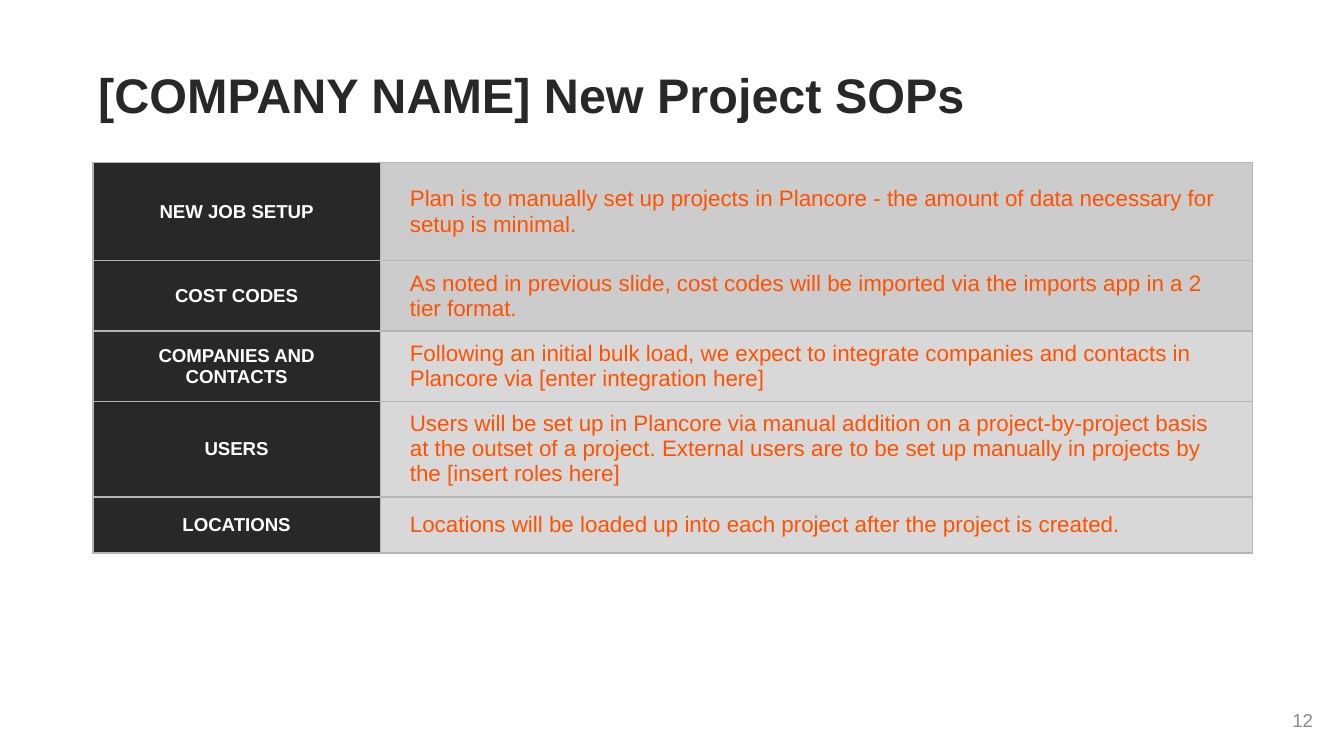
"""Build the new project SOPs slide."""
from dataclasses import dataclass

import pptx
import pptx.dml.color
import pptx.enum.text
import pptx.oxml
import pptx.oxml.ns
import pptx.util
from pptx.util import Inches

ALIGN = pptx.enum.text.PP_ALIGN
ANCHOR = pptx.enum.text.MSO_ANCHOR


@dataclass(frozen=True)
class Theme:
    font: str = "Arial"
    dark: str = "282828"
    white: str = "FFFFFF"
    accent: str = "FF5200"
    grey: str = "CCCCCC"
    light: str = "D8D8D8"
    border: str = "B5B6B4"
    muted: str = "8B8B8B"
    title_size: int = 26
    body_size: int = 12
    label_size: int = 10


@dataclass(frozen=True)
class Procedure:
    label: str
    detail: str
    fill: str
    height: float = 0.42


THEME = Theme()
PROCEDURES = [
    Procedure("NEW JOB SETUP",
              "Plan is to manually set up projects in Plancore - the amount of data "
              "necessary for setup is minimal.", THEME.grey, 0.73),
    Procedure("COST CODES",
              "As noted in previous slide, cost codes will be imported via the imports "
              "app in a 2 tier format.", THEME.grey),
    Procedure("COMPANIES AND CONTACTS",
              "Following an initial bulk load, we expect to integrate companies and "
              "contacts in Plancore via [enter integration here]", THEME.light),
    Procedure("USERS",
              "Users will be set up in Plancore via manual addition on a project-by-project "
              "basis at the outset of a project. External users are to be set up manually "
              "in projects by the [insert roles here]", THEME.light),
    Procedure("LOCATIONS",
              "Locations will be loaded up into each project after the project is created.",
              THEME.light),
]
COLUMN_WIDTHS = (2.14, 6.49)


def write_text(tf, text: str, *, size: int, color: str, bold: bool = False,
               align=ALIGN.LEFT, spacing: float = 1.0) -> None:
    """Write one formatted paragraph into a text frame."""
    tf.word_wrap = True
    p = tf.paragraphs[0]
    p.alignment = align
    p.line_spacing = spacing
    r = p.add_run()
    r.text = text
    r.font.name = THEME.font
    r.font.size = pptx.util.Pt(size)
    r.font.bold = bold
    r.font.color.rgb = pptx.dml.color.RGBColor.from_string(color)


def set_margins(target, side: float, end: pptx.util.Length) -> None:
    """Set equal side margins and equal top and bottom margins."""
    target.margin_left = target.margin_right = Inches(side)
    target.margin_top = target.margin_bottom = end


def add_text(slide, left: float, top: float, width: float, height: float,
             text: str, *, anchor=ANCHOR.TOP, **fmt) -> None:
    """Add a text box with the slide's narrow margins."""
    sp = slide.shapes.add_textbox(Inches(left), Inches(top), Inches(width), Inches(height))
    set_margins(sp.text_frame, 0.04, Inches(0.02))
    sp.text_frame.vertical_anchor = anchor
    write_text(sp.text_frame, text, **fmt)


def fill_cell(cell, text: str, fill: str, margin: float, **fmt) -> None:
    """Fill, border and label one table cell."""
    cell.vertical_anchor = ANCHOR.MIDDLE
    set_margins(cell, margin, pptx.util.Pt(5.4))
    write_text(cell.text_frame, text, **fmt)
    tc_pr = cell._tc.get_or_add_tcPr()
    for side in ("lnL", "lnR", "lnT", "lnB"):
        tc_pr.append(pptx.oxml.parse_xml(
            f'<a:{side} {pptx.oxml.ns.nsdecls("a")} w="{pptx.util.Pt(1)}"><a:solidFill>'
            f'<a:srgbClr val="{THEME.border}"/></a:solidFill></a:{side}>'))
    cell.fill.solid()
    cell.fill.fore_color.rgb = pptx.dml.color.RGBColor.from_string(fill)


def add_procedures(slide, procedures: list[Procedure]) -> None:
    """Add the table of procedures."""
    height = sum(item.height for item in procedures)
    table = slide.shapes.add_table(
        len(procedures), len(COLUMN_WIDTHS), Inches(0.69), Inches(1.21),
        Inches(sum(COLUMN_WIDTHS)), Inches(height)).table
    table.first_row = table.horz_banding = False
    for column, width in zip(table.columns, COLUMN_WIDTHS):
        column.width = Inches(width)
    for row, item in zip(table.rows, procedures):
        row.height = Inches(item.height)
        label, detail = row.cells
        fill_cell(label, item.label, THEME.dark, 0.11, size=THEME.label_size,
                  color=THEME.white, bold=True, align=ALIGN.CENTER)
        fill_cell(detail, item.detail, item.fill, 0.22, size=THEME.body_size,
                  color=THEME.accent)


def main() -> None:
    """Build and save the slide."""
    prs = pptx.Presentation()
    prs.slide_width = Inches(10)
    prs.slide_height = prs.slide_width * 9 // 16
    s = prs.slides.add_slide(prs.slide_layouts[6])
    add_procedures(s, PROCEDURES)
    add_text(s, 0.69, 0.51, 8.62, 0.46, "[COMPANY NAME] New Project SOPs",
             size=THEME.title_size, color=THEME.dark, bold=True, spacing=0.9)
    add_text(s, 7.56, 5.21, 2.25, 0.3, "12", anchor=ANCHOR.MIDDLE,
             size=THEME.label_size, color=THEME.muted, align=ALIGN.RIGHT)
    prs.save("out.pptx")


if __name__ == "__main__":
    main()
